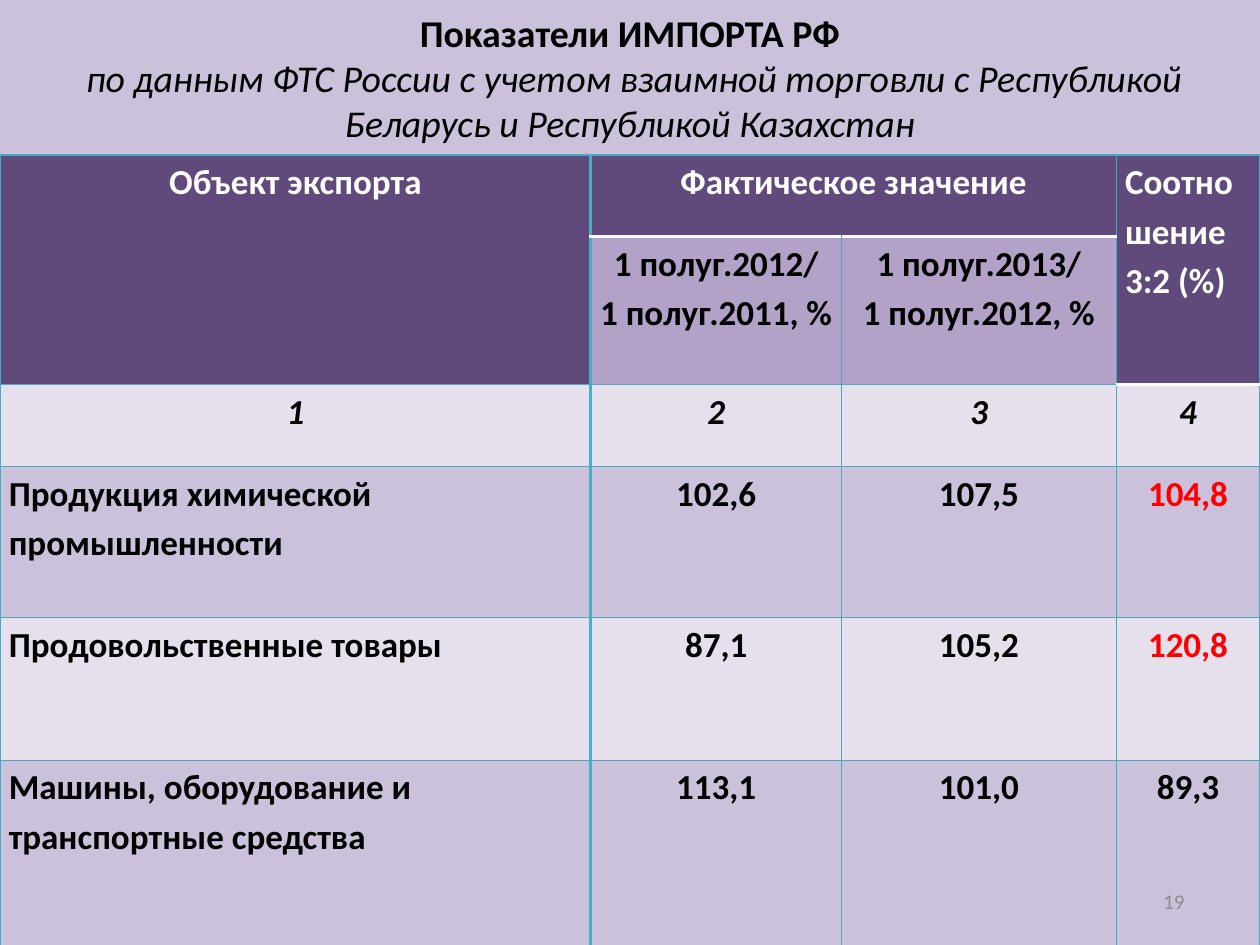
from lxml import etree
from pptx import Presentation
from pptx import util as u
from pptx.dml.color import RGBColor
from pptx.enum import shapes, text
from pptx.oxml.ns import qn

THEME = {
    "font": "Calibri", "title": 21.6, "table": 20, "number": 12,
    "black": "000000", "white": "FFFFFF", "red": "FF0000", "gray": "8C8C8C",
    "head": "604A7B", "subhead": "B3A2C7", "dark": "CCC1DA", "light": "E6E0EC",
    "grid": "46AAC5", "divider": "4BACC6", "thin": 0.75, "thick": 2,
}
SLIDE_WIDTH, SLIDE_HEIGHT, TITLE_HEIGHT = 10, 7.5, 1.23
COLUMNS = [4.69, 1.99, 2.18, 1.14]
ROWS = [0.65, 1.06, 0.65, 1.2, 1.13, 1.59]

TITLE = "Показатели ИМПОРТА РФ"
SUBTITLE = ("\u00a0по данным ФТС России с учетом взаимной торговли "
            "с Республикой Беларусь и Республикой Казахстан")
PAGE_NUMBER = "19"
TABLE = [
    ["Объект экспорта", "Фактическое значение", "", "Соотношение 3:2 (%)"],
    ["", "1 полуг.2012/\n1 полуг.2011, %", "1 полуг.2013/\n1 полуг.2012, %", ""],
    ["1", "2", "3", "4"],
    ["Продукция химической промышленности", "102,6", "107,5", "104,8"],
    ["Продовольственные товары", "87,1", "105,2", "120,8"],
    ["Машины, оборудование и транспортные средства", "113,1", "101,0", "89,3"],
]
MERGES = [((0, 0), (1, 0)), ((0, 1), (0, 2)), ((0, 3), (1, 3))]
WHITE_BELOW = {(0, 1), (0, 2), (1, 3)}
RED_CELLS = {(3, 3), (4, 3)}
LEFT, CENTER, RIGHT = text.PP_ALIGN.LEFT, text.PP_ALIGN.CENTER, text.PP_ALIGN.RIGHT


def color(name):
    return RGBColor.from_string(THEME[name])


def add_run(para, words, size, ink, bold=False, italic=False):
    span = para.add_run()
    span.text = words
    font = span.font
    font.name, font.size = THEME["font"], u.Pt(THEME[size])
    font.bold, font.italic = bold, italic
    font.color.rgb = color(ink)


def add_title(page):
    box = page.shapes.add_shape(shapes.MSO_SHAPE.RECTANGLE, 0, 0,
                                u.Inches(SLIDE_WIDTH), u.Inches(TITLE_HEIGHT))
    box.shadow.inherit = False
    box.fill.solid()
    box.fill.fore_color.rgb = color("dark")
    box.line.fill.background()
    frame = box.text_frame
    frame.word_wrap = True
    frame.vertical_anchor = text.MSO_ANCHOR.MIDDLE
    heading, source = frame.paragraphs[0], frame.add_paragraph()
    heading.alignment = source.alignment = CENTER
    add_run(heading, TITLE, "title", "black", bold=True)
    add_run(source, SUBTITLE, "title", "black", italic=True)


def borders(row, col):
    """Line colour and width for each side; neighbours agree on shared edges."""
    thin, white = ("grid", "thin"), ("white", "thick")
    divider = ("divider", "thick")
    return {
        "a:lnL": divider if col == 1 else thin,
        "a:lnR": divider if col == 0 else thin,
        "a:lnT": white if (row - 1, col) in WHITE_BELOW else thin,
        "a:lnB": white if (row, col) in WHITE_BELOW else thin,
    }


def draw_borders(cell, sides):
    props = cell._tc.get_or_add_tcPr()
    for tag, (ink, width) in sides.items():
        line = etree.SubElement(props, qn(tag), w=str(u.Pt(THEME[width])))
        fill = etree.SubElement(line, qn("a:solidFill"))
        etree.SubElement(fill, qn("a:srgbClr"), val=THEME[ink])


def cell_style(row, col):
    """Fill and text colour by position."""
    if row == 0 or (row == 1 and col in (0, 3)):
        return "head", "white"
    if row == 1:
        return "subhead", "black"
    ink = "red" if (row, col) in RED_CELLS else "black"
    return ("dark" if row % 2 else "light"), ink


def fill_cell(cell, row, col):
    fill, ink = cell_style(row, col)
    draw_borders(cell, borders(row, col))
    cell.fill.solid()
    cell.fill.fore_color.rgb = color(fill)
    cell.margin_left = cell.margin_right = u.Inches(0.07)
    cell.margin_top = cell.margin_bottom = 0
    if not TABLE[row][col]:
        return
    at_left = (col == 0 and row > 2) or (row, col) == (0, 3)
    for index, words in enumerate(TABLE[row][col].split("\n")):
        frame = cell.text_frame
        para = frame.add_paragraph() if index else frame.paragraphs[0]
        para.alignment = LEFT if at_left else CENTER
        para.line_spacing = 1.15
        add_run(para, words, "table", ink, bold=True, italic=row == 2)


def add_indicators(page):
    table = page.shapes.add_table(
        len(ROWS), len(COLUMNS), 0, u.Inches(TITLE_HEIGHT),
        u.Inches(SLIDE_WIDTH), u.Inches(SLIDE_HEIGHT - TITLE_HEIGHT)).table
    for column, width in zip(table.columns, COLUMNS):
        column.width = u.Inches(width)
    for line, height in zip(table.rows, ROWS):
        line.height = u.Inches(height)
    for first, last in MERGES:
        table.cell(*first).merge(table.cell(*last))
    for row in range(len(ROWS)):
        for col in range(len(COLUMNS)):
            fill_cell(table.cell(row, col), row, col)


def add_page_number(page):
    box = page.shapes.add_textbox(u.Inches(7.17), u.Inches(6.95),
                                  u.Inches(2.33), u.Inches(0.4))
    frame = box.text_frame
    frame.word_wrap = True
    frame.vertical_anchor = text.MSO_ANCHOR.MIDDLE
    frame.paragraphs[0].alignment = RIGHT
    add_run(frame.paragraphs[0], PAGE_NUMBER, "number", "gray")


def main():
    deck = Presentation()
    deck.slide_width, deck.slide_height = u.Inches(SLIDE_WIDTH), u.Inches(SLIDE_HEIGHT)
    page = deck.slides.add_slide(deck.slide_layouts[6])
    add_title(page)
    add_indicators(page)
    add_page_number(page)
    deck.save("out.pptx")


if __name__ == "__main__":
    main()
